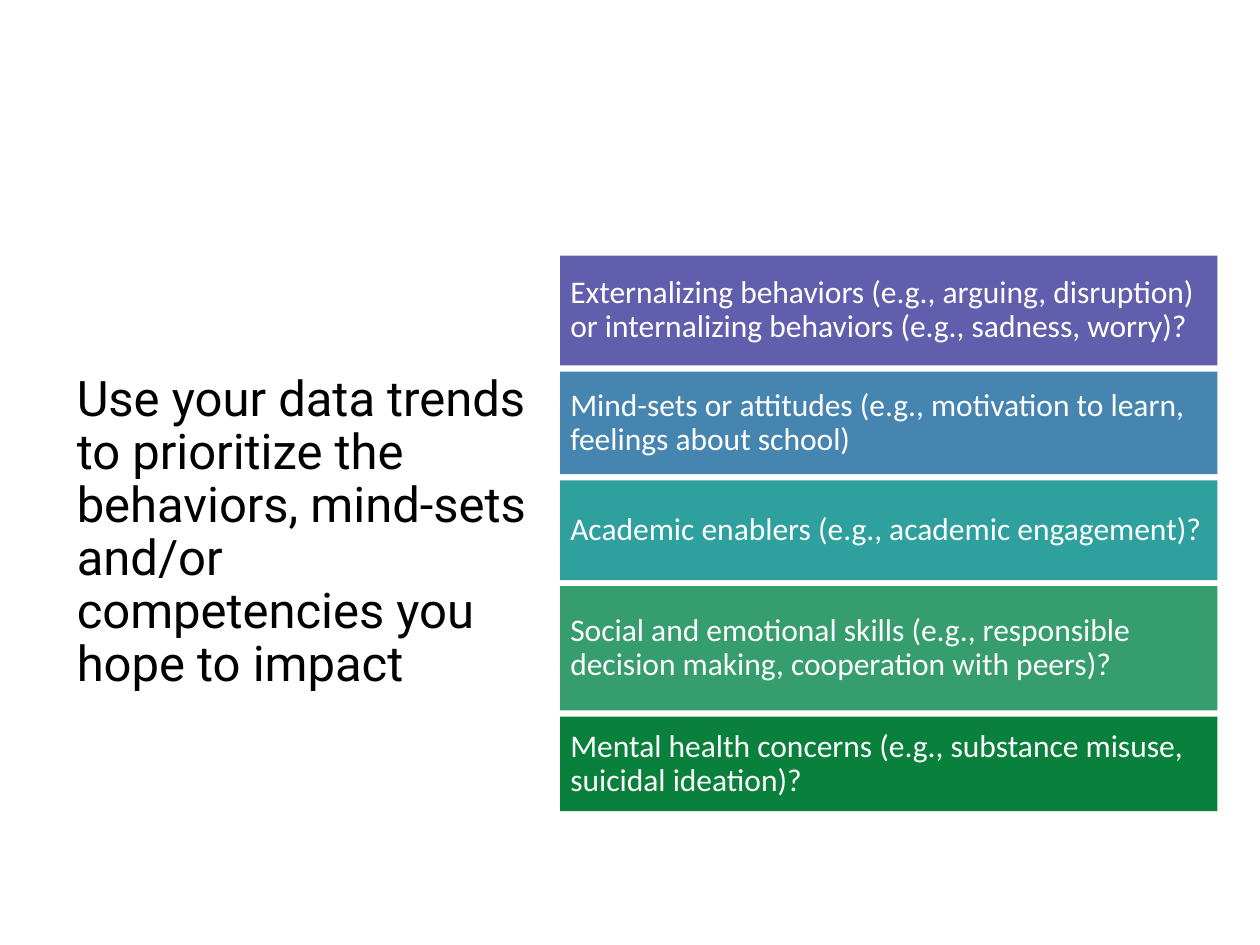
from pptx import Presentation
from pptx.dml.color import RGBColor
from pptx.enum import shapes, text
from pptx.util import Pt

COLORS = {
    "ink": "000000", "white": "FFFFFF", "purple": "625EAE", "blue": "4685B0",
    "teal": "2EA19E", "green": "359D6E", "forest": "09813C",
}
HEADING = ("Use your data trends to prioritize the behaviors, mind-sets "
           "and/or competencies you hope to impact")
# Wording, fill, height of each band
PRIORITIES = [
    ("Externalizing behaviors (e.g., arguing, disruption) or internalizing "
     "behaviors (e.g., sadness, worry)?", "purple", 62.8),
    ("Mind-sets or attitudes (e.g., motivation to learn, feelings about school)",
     "blue", 58.7),
    ("Academic enablers (e.g., academic engagement)?", "teal", 57),
    ("Social and emotional skills (e.g., responsible decision making, "
     "cooperation with peers)?", "green", 71),
    ("Mental health concerns (e.g., substance misuse, suicidal ideation)?",
     "forest", 54),
]
TOP, GAP = 146, 3.5
BAND_LEFT, BAND_WIDTH = 320.1, 375.6


def write(holder, wording, *, font, size, color, inset_x, inset_y):
    frame = holder.text_frame
    frame.word_wrap = True
    frame.vertical_anchor = text.MSO_ANCHOR.MIDDLE
    frame.margin_left = frame.margin_right = Pt(inset_x)
    frame.margin_top = frame.margin_bottom = Pt(inset_y)
    paragraph = frame.paragraphs[0]
    paragraph.alignment = text.PP_ALIGN.LEFT
    paragraph.line_spacing = 0.9
    run = paragraph.add_run()
    run.text = wording
    run.font.name = font
    run.font.size = Pt(size)
    run.font.color.rgb = RGBColor.from_string(COLORS[color])


deck = Presentation()
deck.slide_width, deck.slide_height = Pt(720), Pt(540)
slide = deck.slides.add_slide(deck.slide_layouts[6])

# Heading on the left
heading = slide.shapes.add_textbox(Pt(38.5), Pt(TOP), Pt(271.5), Pt(317.5))
write(heading, HEADING, font="Roboto", size=28, color="ink",
      inset_x=5.4, inset_y=2.7)

# Stack of priority bands
top = TOP
for wording, fill, height in PRIORITIES:
    band = slide.shapes.add_shape(shapes.MSO_SHAPE.RECTANGLE, Pt(BAND_LEFT),
                                  Pt(top), Pt(BAND_WIDTH), Pt(height))
    band.shadow.inherit = False
    band.fill.solid()
    band.fill.fore_color.rgb = RGBColor.from_string(COLORS[fill])
    band.line.fill.background()
    write(band, wording, font="Calibri", size=18, color="white",
          inset_x=5.8, inset_y=5.8)
    top += height + GAP

deck.save("out.pptx")
